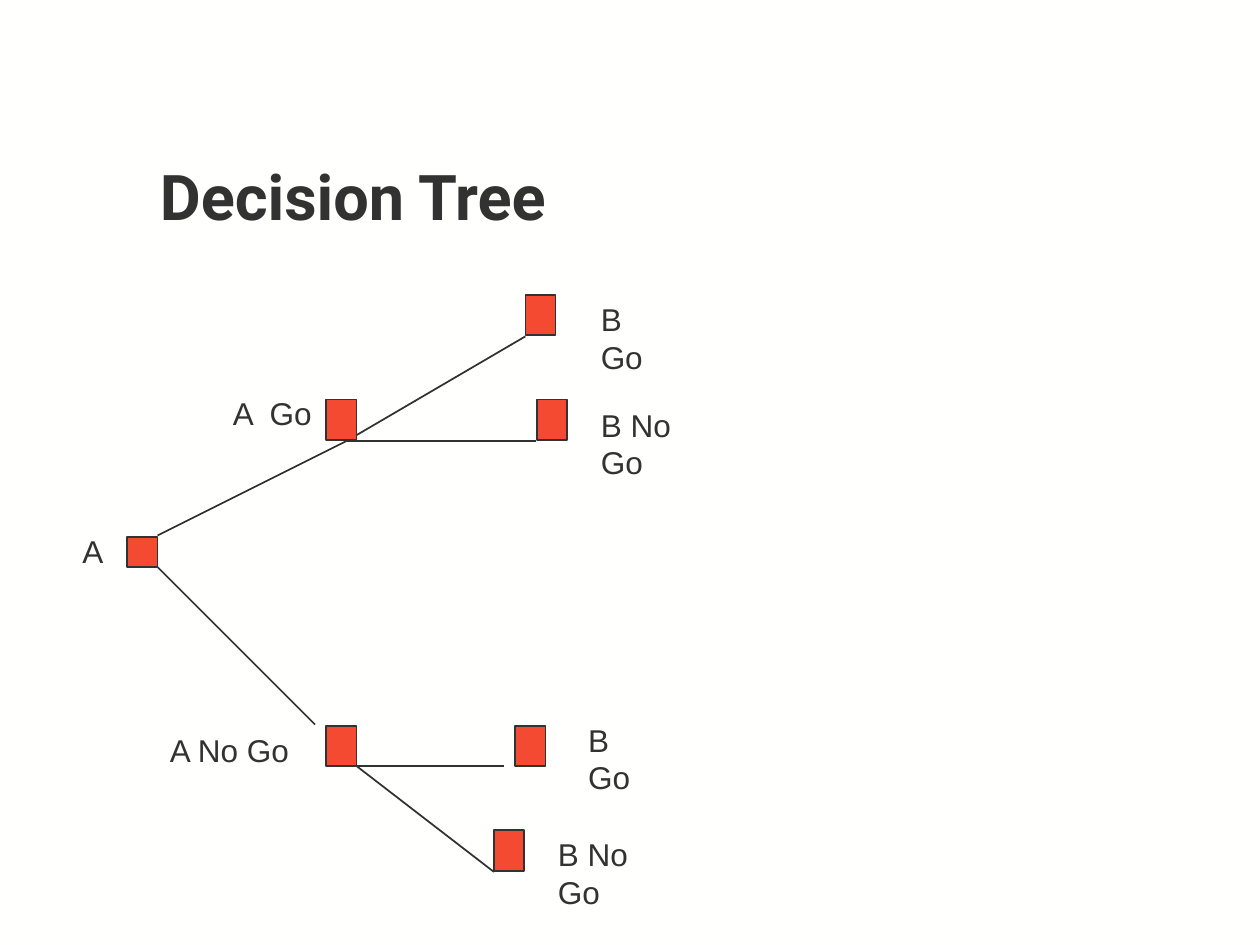
import pptx
import pptx.dml.color
import pptx.enum.shapes
import pptx.enum.text
import pptx.util
from pptx.util import Inches

INK = pptx.dml.color.RGBColor(0x31, 0x32, 0x31)
RED = pptx.dml.color.RGBColor(0xF4, 0x4A, 0x31)
PAPER = pptx.dml.color.RGBColor(0xFF, 0xFF, 0xFE)

TITLE_FONT = {"name": "Roboto", "size": pptx.util.Pt(36), "bold": True}
LABEL_FONT = {"name": "Arial", "size": pptx.util.Pt(18)}

deck = pptx.Presentation()
deck.slide_width, deck.slide_height = Inches(10), Inches(7.5)
page = deck.slides.add_slide(deck.slide_layouts[6])
page.background.fill.solid()
page.background.fill.fore_color.rgb = PAPER


def add_text(text, left, top, width, height, font, frame_format):
    box = page.shapes.add_textbox(
        Inches(left), Inches(top), Inches(width), Inches(height))
    for name, value in frame_format.items():
        setattr(box.text_frame, name, value)
    span = box.text_frame.paragraphs[0].add_run()
    span.text = text
    for name, value in font.items():
        setattr(span.font, name, value)
    span.font.color.rgb = INK


# Title
add_text("Decision Tree", 1.17, 0.33, 8.25, 1.57, TITLE_FONT,
         {"word_wrap": True,
          "vertical_anchor": pptx.enum.text.MSO_ANCHOR.BOTTOM})

# Branches: start x, start y, end x, end y
branches = [
    (1.25, 4.25, 2.75, 3.5),
    (1.25, 4.5, 2.5, 5.75),
    (2.75, 3.5, 4.17, 2.67),
    (2.75, 3.5, 4.25, 3.5),
    (2.83, 6.08, 4, 6.08),
    (2.83, 6.08, 3.92, 6.92),
]
for ends in branches:
    branch = page.shapes.add_connector(
        pptx.enum.shapes.MSO_CONNECTOR.STRAIGHT, *map(Inches, ends))
    branch.line.color.rgb = INK
    branch.line.width = pptx.util.Pt(1)
    properties = branch._element.spPr
    properties.append(properties.makeelement(
        pptx.oxml.ns.qn("a:effectLst"), {}))

# Decision nodes: left, top, height
nodes = [
    (1.01, 4.26, 0.24),
    (2.59, 3.17, 0.32),
    (2.59, 5.76, 0.32),
    (4.17, 2.34, 0.32),
    (4.26, 3.17, 0.32),
    (4.09, 5.76, 0.32),
    (3.92, 6.59, 0.32),
]
for left, top, height in nodes:
    node = page.shapes.add_shape(
        pptx.enum.shapes.MSO_SHAPE.RECTANGLE,
        Inches(left), Inches(top), Inches(0.24), Inches(height))
    node.shadow.inherit = False
    node.fill.solid()
    node.fill.fore_color.rgb = RED
    node.line.color.rgb = INK
    node.line.width = pptx.util.Pt(1)

# Node labels: text, left, top, width, wraps
labels = [
    (" A", 0.5, 4.17, 0.44, False),
    ("A  Go", 1.75, 3.08, 0.84, False),
    ("A No Go", 1.25, 5.75, 1.16, False),
    ("B Go", 4.67, 2.33, 0.76, True),
    ("B No Go", 4.67, 3.17, 1.15, True),
    ("B Go", 4.57, 5.67, 0.76, True),
    ("B No Go", 4.33, 6.58, 1.15, True),
]
for text, left, top, width, wraps in labels:
    add_text(text, left, top, width, 0.4, LABEL_FONT,
             {"word_wrap": wraps,
              "auto_size": pptx.enum.text.MSO_AUTO_SIZE.SHAPE_TO_FIT_TEXT})

deck.save("out.pptx")
